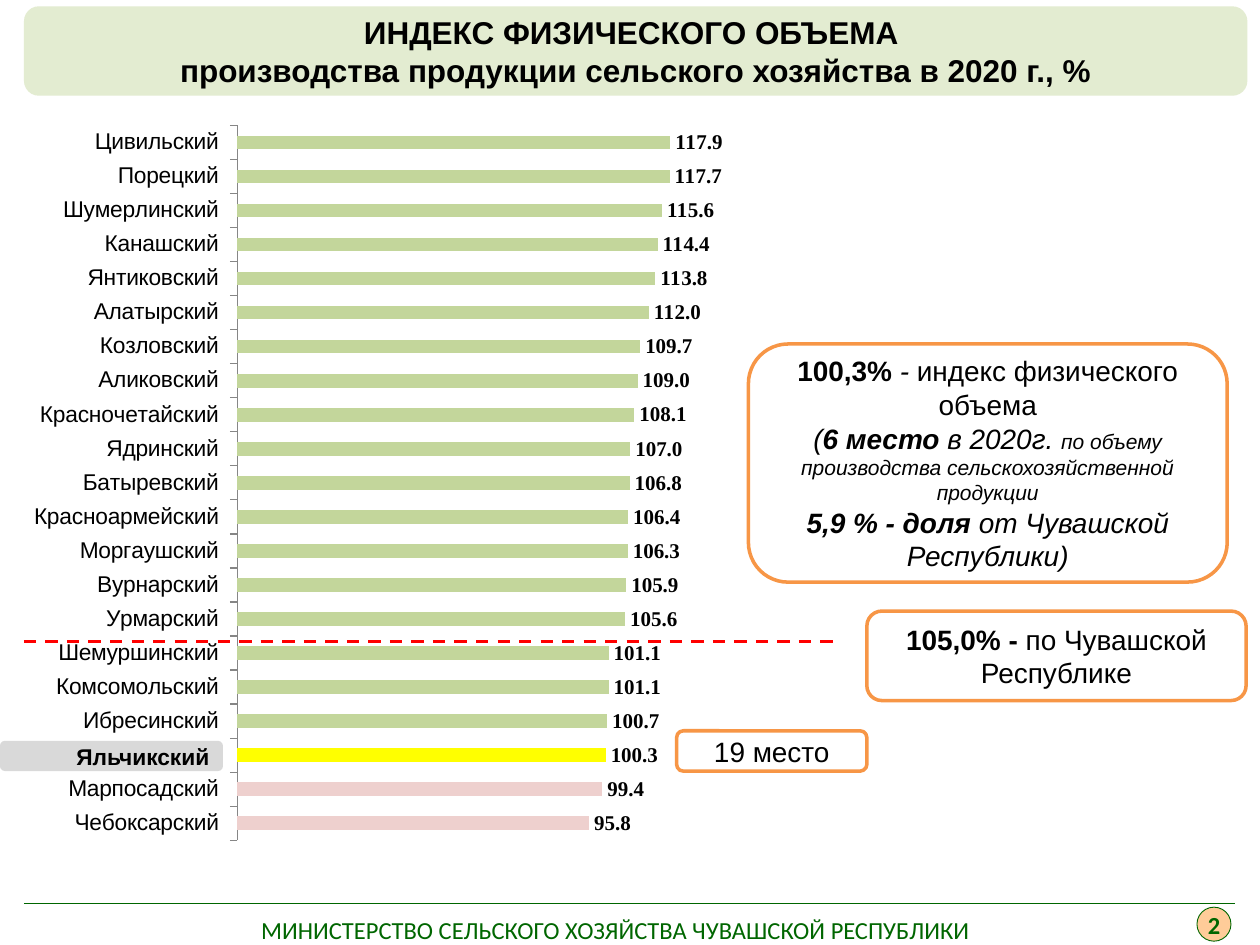
from lxml.etree import SubElement
from pptx import Presentation
from pptx.chart.data import CategoryChartData
from pptx.dml.color import RGBColor
from pptx.enum.chart import XL_CHART_TYPE, XL_LABEL_POSITION, XL_TICK_MARK
from pptx.enum.dml import MSO_LINE
from pptx.enum.shapes import MSO_CONNECTOR, MSO_SHAPE
from pptx.enum.text import MSO_ANCHOR, PP_ALIGN
from pptx.oxml.ns import qn
from pptx.util import Inches, Pt

COLORS = {
    "black": "000000", "white": "FFFFFF", "olive": "C3D69B", "rose": "EED0CE",
    "yellow": "FFFF00", "orange": "F79646", "grey": "D9D9D9", "axis": "868686",
    "green": "006600", "peach": "FFCC99", "red": "FF0000",
}
COLUMNS, ROWS = 100, 75
DISTRICTS = {
    "Чебоксарский": 95.8, "Марпосадский": 99.4, "Яльчикский": 100.3,
    "Ибресинский": 100.7, "Комсомольский": 101.1, "Шемуршинский": 101.1,
    "Урмарский": 105.6, "Вурнарский": 105.9, "Моргаушский": 106.3,
    "Красноармейский": 106.4, "Батыревский": 106.8, "Ядринский": 107,
    "Красночетайский": 108.1, "Аликовский": 109, "Козловский": 109.7,
    "Алатырский": 112, "Янтиковский": 113.8, "Канашский": 114.4,
    "Шумерлинский": 115.6, "Порецкий": 117.7, "Цивильский": 117.9,
}
HIGHLIGHTED = "Яльчикский"


def rgb(name):
    return RGBColor.from_string(COLORS[name])


class IndexSlide:
    def __init__(self):
        self.deck = Presentation()
        self.deck.slide_width, self.deck.slide_height = Inches(10), Inches(7.5)
        self.slide = self.deck.slides.add_slide(self.deck.slide_layouts[6])

    def place(self, left, top, width, height):
        column = self.deck.slide_width / COLUMNS
        row = self.deck.slide_height / ROWS
        return [round(share) for share in
                (left * column, top * row, width * column, height * row)]

    def style(self, font, size, color="black", bold=None, face="Arial"):
        font.name, font.size, font.bold = face, Pt(size), bold
        font.color.rgb = rgb(color)

    def fill_text(self, frame, paragraphs, size, align=PP_ALIGN.CENTER, **look):
        frame.vertical_anchor = MSO_ANCHOR.MIDDLE
        for index, pieces in enumerate(paragraphs):
            line = frame.add_paragraph() if index else frame.paragraphs[0]
            line.alignment = align
            self.style(line.font, size, **look)
            if isinstance(pieces, str):
                line.add_run().text = pieces
                continue
            for words, marks, *own_size in pieces:
                run = line.add_run()
                run.text = words
                run.font.bold = "b" in marks
                run.font.italic = "i" in marks
                if own_size:
                    run.font.size = Pt(own_size[0])

    def shape(self, area, fill, outline=None, weight=2,
              kind=MSO_SHAPE.ROUNDED_RECTANGLE, opacity=None):
        figure = self.slide.shapes.add_shape(kind, *self.place(*area))
        figure.shadow.inherit = False
        figure.fill.solid()
        figure.fill.fore_color.rgb = rgb(fill)
        if opacity:
            tint = figure._element.spPr.find(qn("a:solidFill"))[0]
            SubElement(tint, qn("a:alpha"), val=str(opacity * 1000))
        if outline:
            figure.line.color.rgb = rgb(outline)
            figure.line.width = Pt(weight)
        else:
            figure.line.fill.background()
        return figure.text_frame

    def callout(self, area, paragraphs):
        self.fill_text(self.shape(area, "white", "orange"), paragraphs, 16)

    def text(self, area, words, wrap=True, **look):
        frame = self.slide.shapes.add_textbox(*self.place(*area)).text_frame
        frame.word_wrap = wrap
        self.fill_text(frame, [words], 14, color="green", face="Calibri", **look)
        return frame

    def rule(self, left, right, row, color, weight, dash=None):
        x, y, width, _ = self.place(left, row, right - left, 0)
        stroke = self.slide.shapes.add_connector(MSO_CONNECTOR.STRAIGHT, x, y, x + width, y)
        stroke.line.color.rgb = rgb(color)
        stroke.line.width = Pt(weight)
        if dash:
            stroke.line.dash_style = dash
        SubElement(stroke._element.spPr, qn("a:effectLst"))

    def bars(self, area, values, plot_area):
        data = CategoryChartData(number_format="0.0")
        data.categories = [f"{district} " for district in values]
        data.add_series("Series 1", values.values())
        chart = self.slide.shapes.add_chart(
            XL_CHART_TYPE.BAR_CLUSTERED, *self.place(*area), data).chart
        chart.has_legend = chart.has_title = False
        self.style(chart.font, 10, face="Calibri")

        districts, index = chart.category_axis, chart.value_axis
        districts.major_tick_mark = XL_TICK_MARK.OUTSIDE
        districts.format.line.color.rgb = rgb("axis")
        self.style(districts.tick_labels.font, 13)
        index.minimum_scale, index.maximum_scale = 0, 140
        index.has_major_gridlines = index.visible = False

        plot = chart.plots[0]
        plot.gap_width, plot.vary_by_categories = 150, False
        series = plot.series[0]
        series.format.fill.solid()
        series.format.fill.fore_color.rgb = rgb("olive")
        for point, (district, value) in enumerate(values.items()):
            color = "yellow" if district == HIGHLIGHTED else "rose" if value < 100 else None
            if color:
                fill = series.points[point].format.fill
                fill.solid()
                fill.fore_color.rgb = rgb(color)
        labels = series.data_labels
        labels.show_value = True
        labels.number_format, labels.number_format_is_linked = "0.0", False
        labels.position = XL_LABEL_POSITION.OUTSIDE_END
        self.style(labels.font, 12, bold=True, face="Times New Roman")

        plot_xml = chart._chartSpace.chart.plotArea
        for old in plot_xml.findall(qn("c:layout")):
            plot_xml.remove(old)
        layout = SubElement(plot_xml, qn("c:layout"))
        plot_xml.insert(0, layout)
        manual = SubElement(layout, qn("c:manualLayout"))
        settings = dict(layoutTarget="inner", xMode="edge", yMode="edge",
                        **dict(zip("xywh", plot_area)))
        for tag, value in settings.items():
            SubElement(manual, qn(f"c:{tag}"), val=str(value))


def main():
    page = IndexSlide()
    page.fill_text(page.shape((1.9, 0.5, 97.1, 7.1), "olive", opacity=46),
                   ["ИНДЕКС ФИЗИЧЕСКОГО ОБЪЕМА ",
                    "производства продукции сельского хозяйства в 2020 г., %"], 18, bold=True)

    page.shape((95, 72, 2.7, 2.7), "peach", "green", 0.5, MSO_SHAPE.OVAL)
    number = page.text((93.7, 72.6, 5.3, 1.6), "2", bold=True)
    number.margin_top = number.margin_bottom = 0
    page.rule(1.9, 98, 71.7, "green", 0.75)
    page.text((19.3, 72.1, 59.1, 3.4),
              "МИНИСТЕРСТВО СЕЛЬСКОГО ХОЗЯЙСТВА ЧУВАШСКОЙ РЕСПУБЛИКИ", wrap=False)

    page.bars((0, 8.4, 66.3, 59.8), DISTRICTS, (0.284, 0.026, 0.616, 0.949))

    page.callout((53.7, 58, 15.1, 3.2), ["19 место"])
    page.callout((59.4, 27.3, 38, 18.9), [
        [("100,3% ", "b"), ("- ", "i"), ("индекс физического объема", "")],
        [("(", "i"), ("6 место ", "bi"), ("в 2020г. ", "i"),
         ("по объему производства сельскохозяйственной продукции", "i", 12)],
        [("5,9 % - доля ", "bi"), ("от Чувашской Республики)", "i")],
    ])
    page.callout((68.8, 48.5, 30.1, 7.1),
                 [[("105,0% - ", "b"), ("по Чувашской Республике", "")]])
    page.fill_text(page.shape((0, 58.8, 17.7, 2.4), "grey"), [HIGHLIGHTED], 13,
                   align=PP_ALIGN.RIGHT, bold=True)
    page.rule(1.9, 66.4, 50.9, "red", 1.75, MSO_LINE.DASH)
    page.deck.save("out.pptx")


if __name__ == "__main__":
    main()
